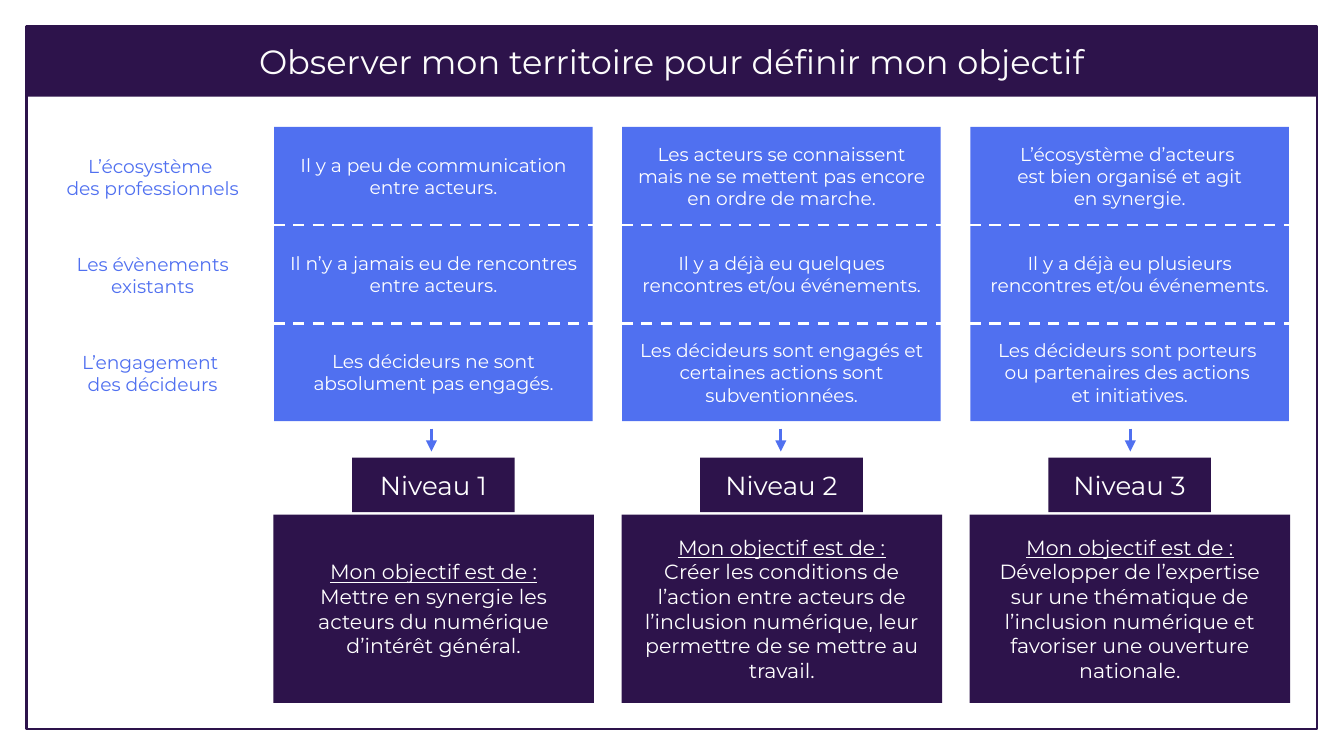
from lxml import etree
from pptx import Presentation
from pptx.dml.color import RGBColor as RGB
from pptx.enum.dml import MSO_LINE as DASH
from pptx.enum.shapes import MSO_CONNECTOR as LINK, MSO_SHAPE as SHAPE
from pptx.enum.text import MSO_ANCHOR as ANCHOR, PP_ALIGN as ALIGN
from pptx.oxml.ns import qn
from pptx.util import Pt

PX = 4572  # 200 px to the inch
HEX = {"dark": "2D134B", "blue": "5070F0", "white": "FFFFFF", "pale": "FCFCFC"}
LEFT, TOP, ROW, STEP = 408, 189, 146, 518

LABELS = ["L’écosystème \ndes professionnels",
          "Les évènements existants",
          "L’engagement \ndes décideurs"]
LEVELS = [
    (["Il y a peu de communication entre acteurs.",
      "Il n’y a jamais eu de rencontres entre acteurs.",
      "Les décideurs ne sont absolument pas engagés."],
     "Mettre en synergie les acteurs du numérique d’intérêt général."),
    (["Les acteurs se connaissent mais ne se mettent pas encore en ordre de marche.",
      "Il y a déjà eu quelques rencontres et/ou événements.",
      "Les décideurs sont engagés et certaines actions sont subventionnées."],
     "Créer les conditions de l’action entre acteurs de l’inclusion numérique, "
     "leur permettre de se mettre au travail."),
    (["L’écosystème d’acteurs \nest bien organisé et agit\nen synergie.",
      "Il y a déjà eu plusieurs rencontres et/ou événements.",
      "Les décideurs sont porteurs \nou partenaires des actions \net initiatives."],
     "Développer de l’expertise sur une thématique de l’inclusion numérique "
     "et favoriser une ouverture nationale."),
]


def put(host, text, x, y, w, h, fill=None, line=None, size=10, color="white", under=False):
    """Add a box with centred text; under underlines its first paragraph."""
    area = [v * PX for v in (x, y, w, h)]
    if fill or line:
        box = host.add_shape(SHAPE.RECTANGLE, *area)
        box.shadow.inherit = False
        box.fill.background()
        box.line.fill.background()
        if fill:
            box.fill.solid()
            box.fill.fore_color.rgb = RGB.from_string(HEX[fill])
        if line:
            box.line.color.rgb = RGB.from_string(HEX[line])
            box.line.width = Pt(1.5)
    else:
        box = host.add_textbox(*area)
    frame = box.text_frame
    frame.word_wrap = True
    frame.vertical_anchor = ANCHOR.MIDDLE
    frame.margin_left = frame.margin_right = 20 * PX
    frame.margin_top = frame.margin_bottom = 20 * PX
    frame.text = text
    for i, para in enumerate(frame.paragraphs):
        para.alignment = ALIGN.CENTER
        for run in para.runs:
            font = run.font
            font.name, font.size = "Montserrat", Pt(size)
            font.color.rgb = RGB.from_string(HEX[color])
            font.underline = under and i == 0


def draw(host, x1, y1, x2, y2, color, dash=False, arrow=False):
    link = host.add_connector(LINK.STRAIGHT, *[v * PX for v in (x1, y1, x2, y2)])
    link.line.color.rgb = RGB.from_string(HEX[color])
    link.line.width = Pt(1.5)
    if dash:
        link.line.dash_style = DASH.DASH
    if arrow:
        outline = link._element.spPr.find(qn("a:ln"))
        etree.SubElement(outline, qn("a:tailEnd"), type="triangle")
    etree.SubElement(link._element.spPr, qn("a:effectLst"))


deck = Presentation()
deck.slide_width, deck.slide_height = 2000 * PX, 1125 * PX
page = deck.slides.add_slide(deck.slide_layouts[6]).shapes

put(page, "", 39, 39, 1921, 1046, line="dark")
put(page, "Observer mon territoire pour définir mon objectif",
    39, 39, 1921, 105, fill="dark", size=18, color="pale")

for i, label in enumerate(LABELS):
    put(page, label, 65, TOP + 22 + i * ROW, 324, 105, color="blue")

for n, (facts, goal) in enumerate(LEVELS):
    x = LEFT + n * STEP
    group = page.add_group_shape().shapes
    for i, fact in enumerate(facts):
        put(group, fact, x, TOP + i * ROW, 474, ROW, fill="blue")
    for i in (1, 2):
        y = TOP + i * ROW
        draw(group, x - 1, y, x + 475, y, "white", dash=True)
    mid = 642 + n * 520
    draw(group, mid, 638, mid, 672, "blue", arrow=True)
    put(group, f"Niveau {n + 1}", x + 116, 681, 242, 81, fill="dark", size=14)
    put(group, "Mon objectif est de :\n" + goal,
        x - 1, 766, 477, 280, fill="dark", size=11, under=True)

deck.save("out.pptx")
